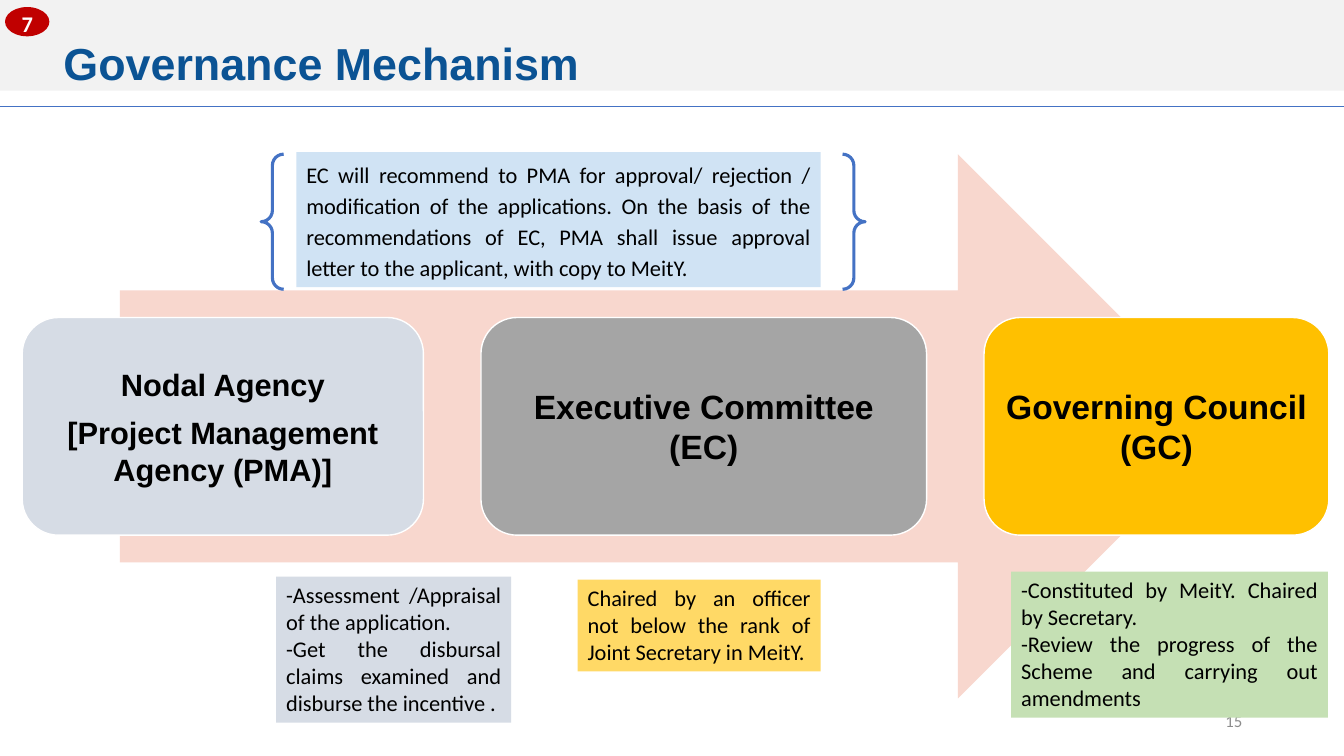
from lxml.etree import SubElement
from pptx import Presentation
from pptx.dml.color import RGBColor
from pptx.enum.shapes import MSO_CONNECTOR, MSO_SHAPE
from pptx.enum.text import MSO_ANCHOR, MSO_AUTO_SIZE, PP_ALIGN
from pptx.oxml.ns import qn
from pptx.util import Inches, Pt

BLACK = RGBColor(0x00, 0x00, 0x00)
WHITE = RGBColor(0xFF, 0xFF, 0xFF)
BAND = RGBColor(0xF2, 0xF2, 0xF2)
BLUE = RGBColor(0x44, 0x72, 0xC4)
NAVY = RGBColor(0x0B, 0x53, 0x94)
RED = RGBColor(0xC0, 0x00, 0x00)
SALMON = RGBColor(0xF8, 0xD7, 0xCE)
SLATE = RGBColor(0xD6, 0xDC, 0xE5)
GREY = RGBColor(0xA5, 0xA5, 0xA5)
GOLD = RGBColor(0xFF, 0xC0, 0x00)
YELLOW = RGBColor(0xFF, 0xD9, 0x66)
GREEN = RGBColor(0xC5, 0xE0, 0xB4)
SKY = RGBColor(0xD0, 0xE3, 0xF4)
PAGE_GREY = RGBColor(0x8C, 0x8C, 0x8C)

WIDTH, HEIGHT = 13.33, 7.5
CARD_TOP, CARD_HEIGHT = 3.15, 2.16

CARDS = [
    (0.22, 3.98, SLATE, 22, ["Nodal Agency", "[Project Management Agency (PMA)]"]),
    (4.77, 4.42, GREY, 24, ["Executive Committee (EC)"]),
    (9.76, 3.42, GOLD, 24, ["Governing Council (GC)"]),
]
NOTES = [
    ((10.03, 5.67, 3.14, 1.45), GREEN, 1,
     ["-Constituted by MeitY. Chaired by Secretary.",
      "-Review the progress of the Scheme and carrying out amendments"]),
    ((5.73, 5.75, 2.41, 0.91), YELLOW, 1,
     ["Chaired by an officer not below the rank of Joint Secretary in MeitY."]),
    ((2.74, 5.72, 2.33, 1.45), SLATE, 1,
     ["-Assessment /Appraisal of the application.",
      "-Get the disbursal claims examined and disburse the incentive ."]),
    ((2.94, 1.51, 5.2, 1.34), SKY, 1.15,
     ["EC will recommend to PMA for approval/ rejection / modification of the "
      "applications. On the basis of the recommendations of EC, PMA shall issue "
      "approval letter to the applicant, with copy to MeitY."]),
]


def apply(target, formats):
    for name, value in formats.items():
        setattr(target, name, value)


class GovernanceSlide:
    heading = {"name": "Arial", "bold": True}
    body = {"name": "Calibri", "size": Pt(16), "bold": False}

    def __init__(self, presentation):
        self.slide = presentation.slides.add_slide(presentation.slide_layouts[6])

    def shape(self, kind, box, fill=None, line=None, line_width=1):
        added = self.slide.shapes.add_shape(kind, *map(Inches, box))
        added.shadow.inherit = False
        if fill is None:
            added.fill.background()
        else:
            added.fill.solid()
            added.fill.fore_color.rgb = fill
        if line is None:
            added.line.fill.background()
        else:
            added.line.color.rgb = line
            added.line.width = Pt(line_width)
        return added

    def rule(self, top):
        divider = self.slide.shapes.add_connector(
            MSO_CONNECTOR.STRAIGHT, 0, Inches(top), Inches(WIDTH), Inches(top))
        divider.line.color.rgb = BLUE
        divider.line.width = Pt(0.5)
        SubElement(divider.element.spPr, qn("a:effectLst"))

    def set_text(self, holder, lines, font, color, align, spacing=1, after=0,
                 anchor=MSO_ANCHOR.MIDDLE, margin=None, grow=False):
        frame = holder.text_frame
        apply(frame, {"word_wrap": True, "vertical_anchor": anchor})
        if margin is not None:
            sides = ("left", "top", "right", "bottom")
            apply(frame, {f"margin_{side}": Inches(margin) for side in sides})
        if grow:
            frame.auto_size = MSO_AUTO_SIZE.SHAPE_TO_FIT_TEXT
        for index, line in enumerate(lines):
            paragraph = frame.add_paragraph() if index else frame.paragraphs[0]
            apply(paragraph, {"alignment": align, "line_spacing": spacing,
                              "space_after": Pt(after)})
            run = paragraph.add_run()
            run.text = line
            apply(run.font, font)
            run.font.color.rgb = color

    def label(self, box, text, font, color, align, **layout):
        holder = self.slide.shapes.add_textbox(*map(Inches, box))
        self.set_text(holder, [text], font, color, align, **layout)

    def card(self, left, width, fill, size, lines):
        box = self.shape(MSO_SHAPE.ROUNDED_RECTANGLE,
                         (left, CARD_TOP, width, CARD_HEIGHT), fill, WHITE)
        self.set_text(box, lines, {**self.heading, "size": Pt(size)}, BLACK,
                      PP_ALIGN.CENTER, after=8, margin=0.09)

    def note(self, box, fill, spacing, lines):
        panel = self.shape(MSO_SHAPE.RECTANGLE, box, fill)
        self.set_text(panel, lines, self.body, BLACK, PP_ALIGN.JUSTIFY, spacing,
                      anchor=MSO_ANCHOR.TOP, grow=True)

    def badge(self, box, text):
        oval = self.shape(MSO_SHAPE.OVAL, box, RED)
        self.set_text(oval, [text], {**self.body, "bold": True}, WHITE,
                      PP_ALIGN.CENTER, 1.14)


def main():
    presentation = Presentation()
    apply(presentation, {"slide_width": Inches(WIDTH), "slide_height": Inches(HEIGHT)})
    governance = GovernanceSlide(presentation)
    governance.shape(MSO_SHAPE.RECTANGLE, (0, 0, WIDTH, 0.9), BAND)
    governance.rule(1.06)
    governance.label((9.42, 6.95, 3, 0.4), "15", {**governance.body, "size": Pt(12)},
                     PAGE_GREY, PP_ALIGN.RIGHT)
    governance.shape(MSO_SHAPE.RIGHT_ARROW, (1.19, 1.53, 11.01, 5.4), SALMON)
    for card in CARDS:
        governance.card(*card)
    for note in NOTES:
        governance.note(*note)
    governance.shape(MSO_SHAPE.DOUBLE_BRACE, (2.59, 1.53, 5.99, 1.34),
                     line=BLUE, line_width=2.25)
    governance.label((0.5, 0.05, WIDTH - 0.5, 0.87), "Governance Mechanism",
                     {**governance.heading, "size": Pt(32)}, NAVY,
                     PP_ALIGN.JUSTIFY, spacing=1.5, margin=0.13)
    governance.badge((0.05, 0.07, 0.44, 0.29), "7")
    presentation.save("out.pptx")


if __name__ == "__main__":
    main()
